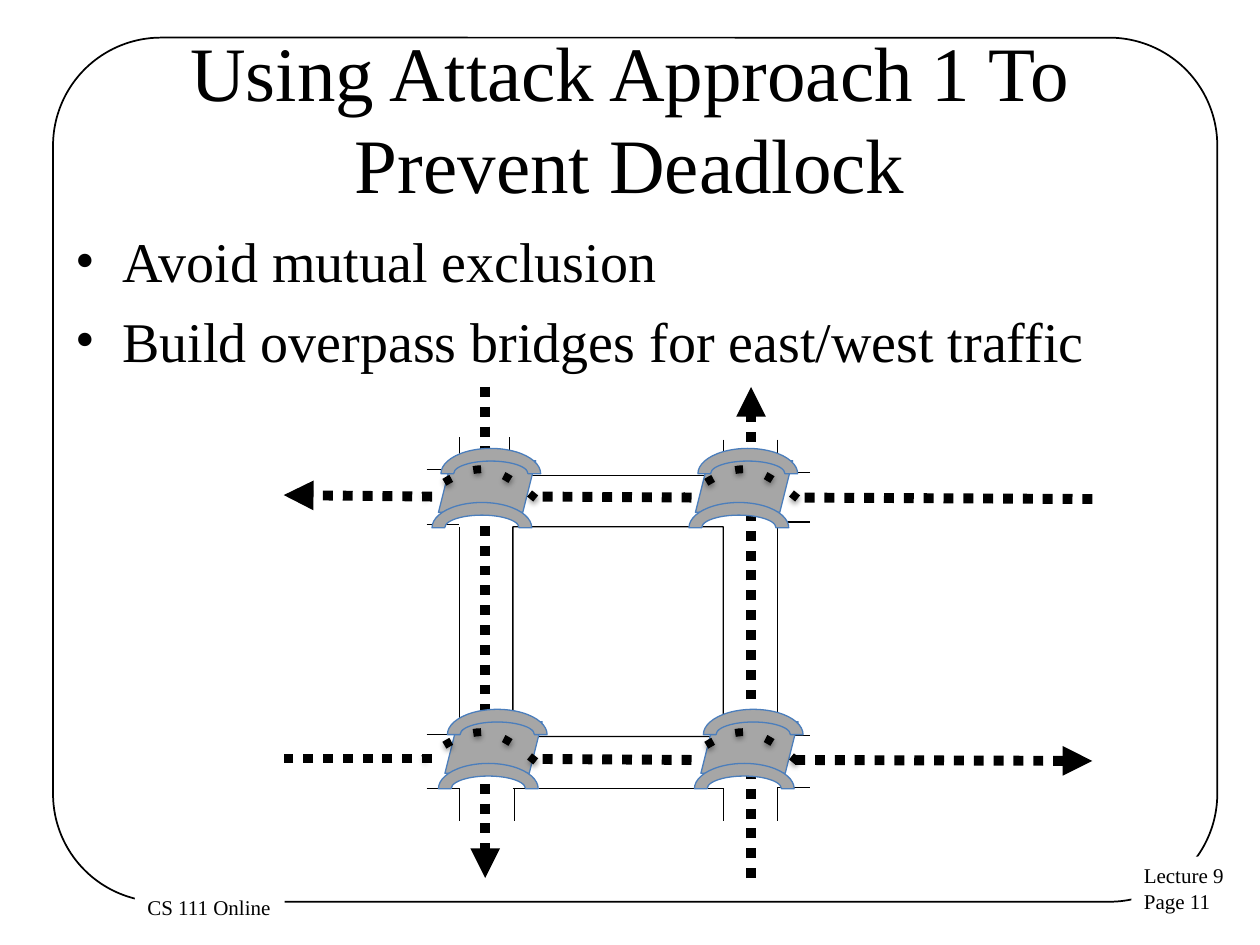
from dataclasses import dataclass
from itertools import product
from lxml.etree import SubElement
from pptx import Presentation
from pptx.dml.color import RGBColor
from pptx.enum.shapes import MSO_CONNECTOR, MSO_SHAPE
from pptx.enum.text import MSO_ANCHOR, MSO_AUTO_SIZE, PP_ALIGN
from pptx.oxml.ns import qn
from pptx.util import Cm, Pt


@dataclass(frozen=True)
class Theme:
    font: str = "Times New Roman"
    ink: RGBColor = RGBColor(0, 0, 0)
    paper: RGBColor = RGBColor(255, 255, 255)
    bridge: RGBColor = RGBColor(0xA6, 0xA6, 0xA6)
    bridge_edge: RGBColor = RGBColor(0x4B, 0x7E, 0xBC)
    title_size: float = 44
    body_size: float = 32
    label_size: float = 12
    thin: float = 0.75
    frame: float = 1
    ramp: float = 4.5
    traffic: float = 5.67


class SlideBuilder:
    def __init__(self, slide, theme):
        self.slide = slide
        self.theme = theme

    def add_run(self, paragraph, text, size):
        run = paragraph.add_run()
        run.text = text
        run.font.name = self.theme.font
        run.font.size = Pt(size)
        run.font.color.rgb = self.theme.ink

    def add_title(self, text, left, top, width, height):
        title = self.slide.shapes.title
        title.left, title.top, title.width, title.height = map(Cm, (left, top, width, height))
        frame = title.text_frame
        frame.word_wrap = True
        frame.auto_size = MSO_AUTO_SIZE.NONE
        frame.vertical_anchor = MSO_ANCHOR.MIDDLE
        paragraph = frame.paragraphs[0]
        paragraph.alignment = PP_ALIGN.CENTER
        self.add_run(paragraph, text, self.theme.title_size)

    def add_lines(self, frame, lines, size):
        for index, text in enumerate(lines):
            paragraph = frame.add_paragraph() if index else frame.paragraphs[0]
            self.add_run(paragraph, text, size)

    def add_bullets(self, lines, left, top, width, height):
        box = self.slide.shapes.add_textbox(*map(Cm, (left, top, width, height)))
        box.text_frame.word_wrap = True
        self.add_lines(box.text_frame, lines, self.theme.body_size)
        for paragraph in box.text_frame.paragraphs:
            paragraph.space_before = Pt(7)
            properties = paragraph._p.get_or_add_pPr()
            properties.set("marL", str(Cm(0.95)))
            properties.set("indent", str(-Cm(0.95)))
            SubElement(properties, qn("a:buFont"), typeface=self.theme.font)
            SubElement(properties, qn("a:buChar"), char="•")

    def add_label(self, lines, left, top, width, height):
        box = self.slide.shapes.add_textbox(*map(Cm, (left, top, width, height)))
        box.fill.solid()
        box.fill.fore_color.rgb = self.theme.paper
        box.text_frame.word_wrap = False
        self.add_lines(box.text_frame, lines, self.theme.label_size)

    def add_outline(self, kind, left, top, width, height, color, weight,
                    fill=None, adjustments=()):
        shape = self.slide.shapes.add_shape(kind, *map(Cm, (left, top, width, height)))
        shape.shadow.inherit = False
        if fill is None:
            shape.fill.background()
        else:
            shape.fill.solid()
            shape.fill.fore_color.rgb = fill
        shape.line.color.rgb = color
        shape.line.width = Pt(weight)
        for index, value in enumerate(adjustments):
            shape.adjustments[index] = value

    def style_stroke(self, shape, weight, dash=None, arrow=False):
        shape.line.color.rgb = self.theme.ink
        shape.line.width = Pt(weight)
        stroke = shape.element.spPr.find(qn("a:ln"))
        if dash:
            SubElement(stroke, qn("a:prstDash"), val=dash)
        if arrow:
            SubElement(stroke, qn("a:tailEnd"), type="triangle")

    def add_line(self, x1, y1, x2, y2, weight, dash=None, arrow=False):
        line = self.slide.shapes.add_connector(
            MSO_CONNECTOR.STRAIGHT, *map(Cm, (x1, y1, x2, y2)))
        self.style_stroke(line, weight, dash, arrow)
        SubElement(line.element.spPr, qn("a:effectLst"))

    def add_road_edge(self, x1, y1, x2, y2):
        self.add_line(x1, y1, x2, y2, self.theme.thin)

    def add_traffic(self, x1, y1, x2, y2, arrow=False):
        self.add_line(x1, y1, x2, y2, self.theme.traffic, "sysDot", arrow)

    def add_bridge(self, left, top):
        parts = (
            (MSO_SHAPE.PARALLELOGRAM, 0.13, 0.25, 1.96, 1.04, ()),
            (MSO_SHAPE.BLOCK_ARC, 0.18, 0, 2.01, 1.02, (108, 0, 0.25)),
            (MSO_SHAPE.BLOCK_ARC, 0, 1.09, 2.01, 1.02, (108, 0, 0.25)),
        )
        for kind, dx, dy, width, height, adjustments in parts:
            self.add_outline(kind, left + dx, top + dy, width, height,
                             self.theme.bridge_edge, self.theme.thin,
                             self.theme.bridge, adjustments)

    def add_ramp(self, x, y):
        curves = (
            ((0, 0), (-0.36, -0.29), (-0.71, -0.58), (-1.09, -0.59)),
            ((-1.09, -0.59), (-1.47, -0.59), (-1.85, -0.33), (-2.26, -0.05)),
        )
        points = [(Cm(x + dx), Cm(y + dy))
                  for curve in curves for dx, dy in bezier_points(curve)]
        builder = self.slide.shapes.build_freeform(Cm(x), Cm(y))
        builder.add_line_segments(points, close=False)
        shape = builder.convert_to_shape()
        shape.fill.background()
        self.style_stroke(shape, self.theme.ramp, "dot")
        shape.shadow.inherit = False
        effects = shape.element.spPr.find(qn("a:effectLst"))
        shadow = SubElement(effects, qn("a:outerShdw"), blurRad=str(Pt(3.1)),
                            dist=str(Pt(1.6)), dir="5400000", rotWithShape="0")
        color = SubElement(shadow, qn("a:srgbClr"), val=str(self.theme.ink))
        SubElement(color, qn("a:alpha"), val="38000")


def bezier_points(curve, steps=12):
    for step in range(1, steps + 1):
        t = step / steps
        weights = ((1 - t) ** 3, 3 * t * (1 - t) ** 2, 3 * t * t * (1 - t), t ** 3)
        yield tuple(sum(w * point[axis] for w, point in zip(weights, curve))
                    for axis in (0, 1))


def draw_roads(builder):
    west, inner_west, inner_east, east = 9.27, 10.34, 14.58, 15.67
    north, inner_north, inner_south, south = 9.58, 10.62, 14.85, 15.89
    builder.add_outline(MSO_SHAPE.ROUNDED_RECTANGLE, inner_west, inner_north,
                        inner_east - inner_west, inner_south - inner_north,
                        builder.theme.ink, builder.theme.thin, adjustments=(0.001,))
    for y in (north, south):
        builder.add_road_edge(inner_west, y, inner_east, y)
    for x in (west, east):
        builder.add_road_edge(x, inner_north, x, inner_south)
    for x, top in ((west, 8.81), (10.27, 8.81), (inner_east, 8.86), (east, 8.86)):
        builder.add_road_edge(x, top, x, top + 0.69)
    for x in (west, inner_west + 0.03, inner_east, east):
        builder.add_road_edge(x, south, x, 16.56)
    for y in (9.47, 10.57, 14.81, 15.9):
        builder.add_road_edge(8.6, y, 9.25, y)
    for y in (9.53, 10.52, 14.83, 15.88):
        builder.add_road_edge(east, y, 16.33, y)


def draw_traffic(builder):
    for left, top in ((8.71, 9.04), (13.89, 9.04), (14, 14.3), (8.84, 14.3)):
        builder.add_bridge(left, top)
    builder.add_traffic(8.71, 10.01, 5.72, 9.98, arrow=True)
    builder.add_traffic(22.02, 10.06, 16.03, 10.03)
    builder.add_traffic(8.71, 15.29, 5.72, 15.29)
    builder.add_traffic(16.03, 15.32, 22.02, 15.34, arrow=True)
    for y in (10.03, 15.32):
        builder.add_traffic(13.94, y, 10.9, y - 0.02)
    for x, y in product((16.08, 10.8), (10.05, 15.35)):
        builder.add_ramp(x, y)


def main():
    presentation = Presentation()
    presentation.slide_width, presentation.slide_height = Cm(25.4), Cm(19.05)
    slide = presentation.slides.add_slide(presentation.slide_layouts[5])
    theme = Theme()
    builder = SlideBuilder(slide, theme)
    builder.add_outline(MSO_SHAPE.ROUNDED_RECTANGLE, 1.07, 0.76, 23.47, 17.42,
                        theme.ink, theme.frame, adjustments=(0.125,))
    builder.add_label(("Lecture 9", "Page 11"), 22.81, 17.27, 2.13, 1.3)
    builder.add_label(("CS 111 Online",), 2.72, 17.91, 3.02, 0.76)
    builder.add_title("Using Attack Approach 1 To Prevent Deadlock", 1.27, 0.76, 22.86, 3.18)
    builder.add_bullets(("Avoid mutual exclusion",
                         "Build overpass bridges for east/west traffic"),
                        1.27, 4.45, 22.86, 12.57)
    builder.add_traffic(15.14, 17.7, 15.14, 7.8, arrow=True)
    builder.add_traffic(9.78, 7.8, 9.78, 17.7, arrow=True)
    draw_roads(builder)
    draw_traffic(builder)
    presentation.save("out.pptx")


if __name__ == "__main__":
    main()
